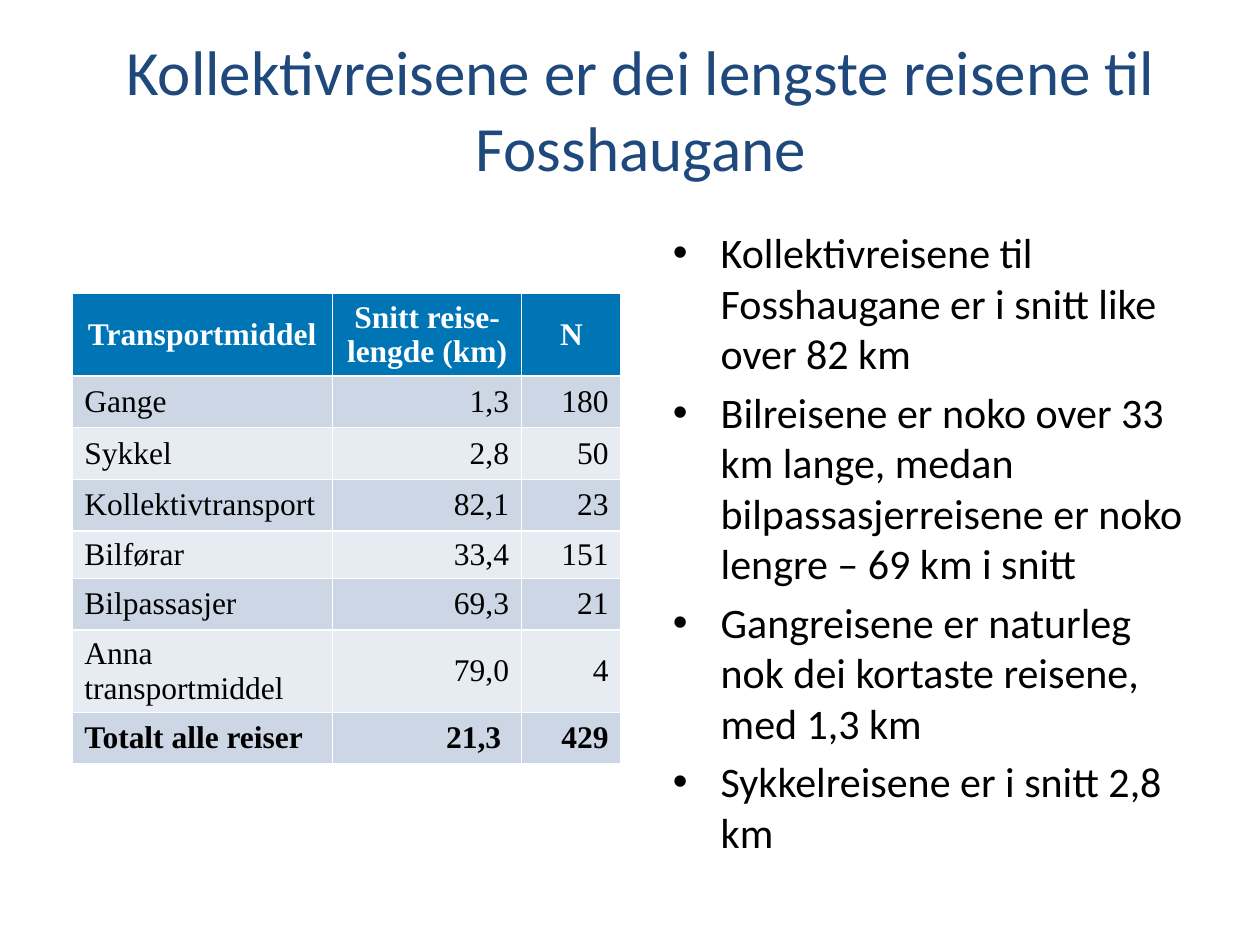
from pptx import Presentation
from pptx.dml.color import RGBColor
from pptx.enum.text import MSO_ANCHOR, MSO_AUTO_SIZE, PP_ALIGN
from pptx.oxml.ns import qn
from pptx.util import Inches, Pt

LEFT, CENTER, RIGHT = PP_ALIGN.LEFT, PP_ALIGN.CENTER, PP_ALIGN.RIGHT
TOP, MIDDLE = MSO_ANCHOR.TOP, MSO_ANCHOR.MIDDLE
NO_AUTOFIT = MSO_AUTO_SIZE.NONE

TITLE = "Kollektivreisene er dei lengste reisene til Fosshaugane"
POINTS = [
    "Kollektivreisene til Fosshaugane er i snitt like over 82 km",
    "Bilreisene er noko over 33 km lange, medan bilpassasjerreisene er noko "
    "lengre – 69 km i snitt",
    "Gangreisene er naturleg nok dei kortaste reisene, med 1,3 km",
    "Sykkelreisene er i snitt 2,8 km",
]
TRIPS = [
    ("Transportmiddel", "Snitt reise-lengde (km)", "N"),
    ("Gange", "1,3", "180"),
    ("Sykkel", "2,8", "50"),
    ("Kollektivtransport", "82,1", "23"),
    ("Bilførar", "33,4", "151"),
    ("Bilpassasjer", "69,3", "21"),
    ("Anna transportmiddel", "79,0", "4"),
    ("Totalt alle reiser", "21,3 ", "429"),
]
COLUMN_WIDTHS = [2.07, 1.5, 0.79]
ROW_HEIGHTS = [0.65, 0.41, 0.41, 0.41, 0.37, 0.41, 0.65, 0.41]
HEADER_FILL = "0075B6"
BAND_FILLS = ["E7ECF3", "CCD6E5"]

TITLE_FONT = {"name": "Calibri", "size": Pt(36), "color": "1F497D"}
BODY_FONT = {"name": "Calibri", "size": Pt(24), "color": "000000"}
HEADER_FONT = {"name": "Times New Roman", "size": Pt(18), "color": "FFFFFF", "bold": True}
CELL_FONT = {**HEADER_FONT, "color": "000000", "bold": False}
TOTAL_FONT = {**CELL_FONT, "bold": True}


def set_color(target, color):
    target.rgb = RGBColor.from_string(color)


def format_font(font, values):
    for name, value in values.items():
        if name == "color":
            set_color(font.color, value)
        else:
            setattr(font, name, value)


def place(shape, left, top, width, height):
    box = {"left": left, "top": top, "width": width, "height": height}
    for name, value in box.items():
        setattr(shape, name, Inches(value))


def prepare_frame(shape):
    frame = shape.text_frame
    frame.word_wrap = True
    frame.auto_size = NO_AUTOFIT
    frame.vertical_anchor = TOP
    return frame


def add_bullet(paragraph):
    properties = paragraph._p.get_or_add_pPr()
    properties.set("marL", str(Inches(0.38)))
    properties.set("indent", str(Inches(-0.38)))
    bullet = properties.makeelement(qn("a:buChar"), {"char": "•"})
    properties.append(bullet)


def fill_title(shape):
    place(shape, 0.57, 0.21, 9.03, 0.85)
    paragraph = prepare_frame(shape).paragraphs[0]
    paragraph.text = TITLE
    paragraph.alignment = CENTER
    format_font(paragraph.runs[0].font, TITLE_FONT)


def fill_list(shape):
    place(shape, 5.24, 1.75, 4.26, 4.95)
    frame = prepare_frame(shape)
    for index, point in enumerate(POINTS):
        paragraph = frame.add_paragraph() if index else frame.paragraphs[0]
        paragraph.text = point
        add_bullet(paragraph)
        paragraph.space_before = Pt(4.8 if index else 0)
        format_font(paragraph.runs[0].font, BODY_FONT)


def fill_cell(cell, text, fill, alignment, font_values):
    cell.fill.solid()
    set_color(cell.fill.fore_color, fill)
    cell.vertical_anchor = MIDDLE
    paragraph = cell.text_frame.paragraphs[0]
    paragraph.text = text
    paragraph.alignment = alignment
    format_font(paragraph.runs[0].font, font_values)


def add_trip_table(slide):
    # The default table style supplies the white cell borders
    frame = slide.shapes.add_table(
        len(TRIPS), len(COLUMN_WIDTHS), Inches(0.57), Inches(2.33),
        Inches(sum(COLUMN_WIDTHS)), Inches(sum(ROW_HEIGHTS)))
    table = frame.table
    for column, width in zip(table.columns, COLUMN_WIDTHS):
        column.width = Inches(width)
    for row, height in zip(table.rows, ROW_HEIGHTS):
        row.height = Inches(height)

    last = len(TRIPS) - 1
    for row, values in enumerate(TRIPS):
        fill = BAND_FILLS[row % 2] if row else HEADER_FILL
        font_values = {0: HEADER_FONT, last: TOTAL_FONT}.get(row, CELL_FONT)
        for column, text in enumerate(values):
            body_alignment = RIGHT if column else LEFT
            alignment = body_alignment if row else CENTER
            fill_cell(table.cell(row, column), text, fill, alignment, font_values)


def main():
    presentation = Presentation()
    presentation.slide_width = Inches(10)
    presentation.slide_height = Inches(7.5)
    slide = presentation.slides.add_slide(presentation.slide_layouts[1])

    # Title above, bullet list on the right, table on the left
    fill_title(slide.shapes.title)
    fill_list(slide.placeholders[1])
    add_trip_table(slide)

    presentation.save("out.pptx")


if __name__ == "__main__":
    main()
